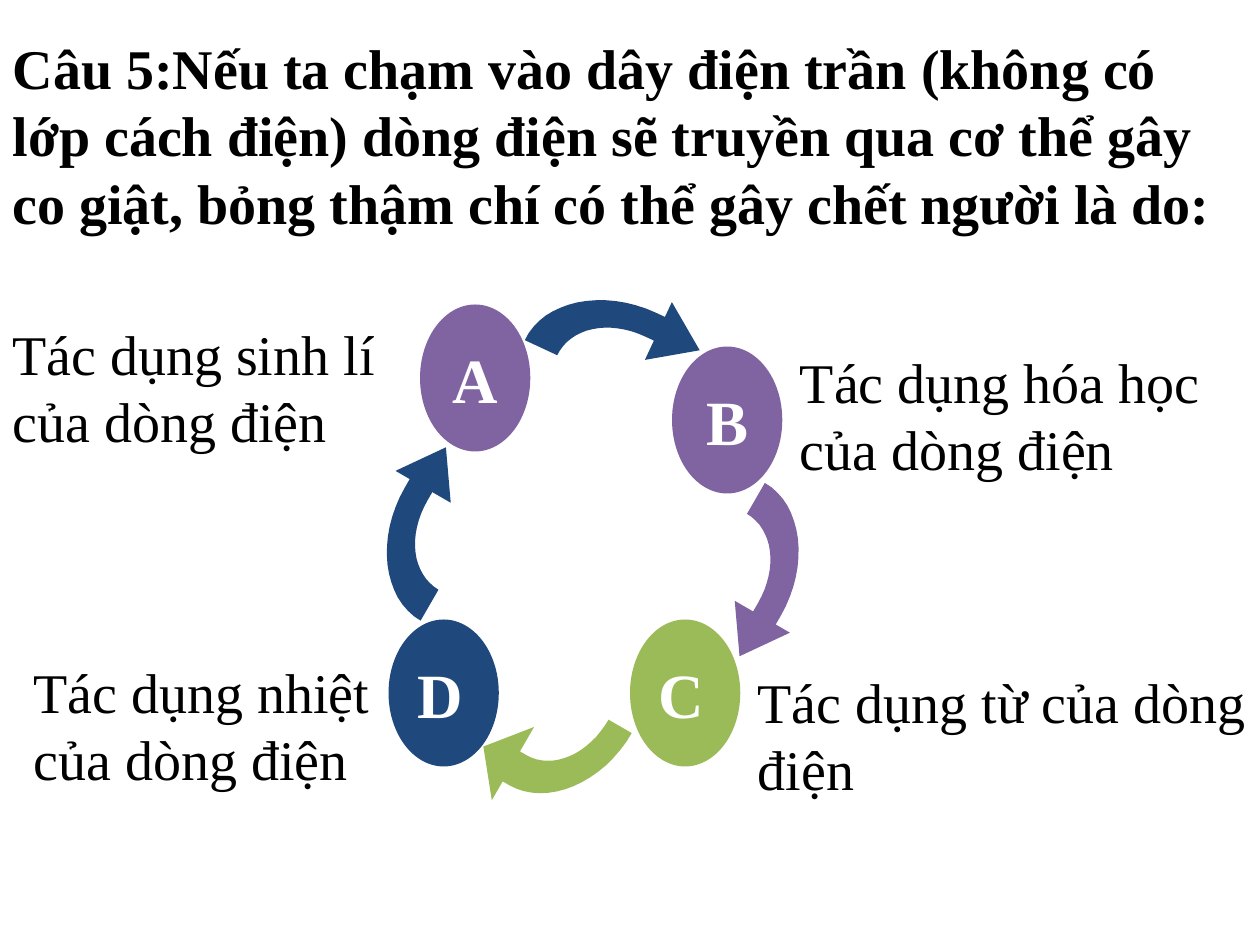
from dataclasses import dataclass

from pptx import Presentation
from pptx import util as u
from pptx.dml.color import RGBColor
from pptx.enum import shapes, text

CELL = u.Inches(1) / 12  # grid of 120 columns by 90 rows


@dataclass(frozen=True)
class Theme:
    font: str = "Times New Roman"
    black: str = "000000"
    white: str = "FFFFFF"
    plum: str = "8064A2"
    green: str = "9BBB59"
    navy: str = "1F497D"
    body: int = 32
    mark: int = 36


@dataclass(frozen=True)
class Box:
    col: float
    row: float
    cols: float
    rows: float

    def emu(self) -> list[int]:
        return [round(n * CELL) for n in (self.col, self.row, self.cols, self.rows)]


@dataclass(frozen=True)
class Choice:
    mark: str
    label: str
    area: Box
    col: float
    row: float
    fill: str
    align: text.PP_ALIGN


@dataclass(frozen=True)
class Arrow:
    area: Box
    turn: float
    fill: str


THEME = Theme()
LEFT, MID = text.PP_ALIGN.LEFT, text.PP_ALIGN.CENTER
TITLE = ("Câu 5:Nếu ta chạm vào dây điện trần (không có lớp cách điện) "
         "dòng điện sẽ truyền qua cơ thể gây co giật, bỏng thậm chí "
         "có thể gây chết người là do:")
CHOICES = [
    Choice("A", "Tác dụng sinh lí của dòng điện",
           Box(0, 31.8, 41, 10), 40, 29, THEME.plum, MID),
    Choice("B", "Tác dụng hóa học của dòng điện",
           Box(75, 34, 45, 11), 64, 33, THEME.plum, MID),
    Choice("C", "Tác dụng từ của dòng điện",
           Box(71, 64, 49, 12), 60, 59, THEME.green, LEFT),
    Choice("D", "Tác dụng nhiệt của dòng điện",
           Box(2, 62, 36, 14), 37, 59, THEME.navy, LEFT),
]
ARROWS = [
    Arrow(Box(51.2, 26.9, 15.5, 9.2), 25, THEME.navy),
    Arrow(Box(65.2, 50.4, 15.5, 9.2), 120, THEME.plum),
    Arrow(Box(46.3, 66.1, 11.6, 12.2), 210, THEME.green),
    Arrow(Box(32.2, 45.5, 15.5, 9.2), 300, THEME.navy),
]


def write(shape, words: str, size: int = THEME.body, color: str = THEME.black,
          bold: bool = False, align=LEFT, anchor=text.MSO_ANCHOR.MIDDLE) -> None:
    frame = shape.text_frame
    frame.word_wrap = True
    frame.auto_size = text.MSO_AUTO_SIZE.NONE
    frame.vertical_anchor = anchor
    frame.margin_left = frame.margin_right = u.Inches(0.1)
    frame.margin_top = frame.margin_bottom = u.Inches(0.1)
    para = frame.paragraphs[0]
    para.alignment = align
    run = para.add_run()
    run.text = words
    run.font.name, run.font.size, run.font.bold = THEME.font, u.Pt(size), bold
    run.font.color.rgb = RGBColor.from_string(color)


def paint(shape, color: str) -> None:
    shape.shadow.inherit = False
    shape.fill.solid()
    shape.fill.fore_color.rgb = RGBColor.from_string(color)
    shape.line.fill.background()


def curve(a, b, c, d, steps: int = 16) -> list[tuple[float, float]]:
    """Points along a cubic Bézier curve, both ends included."""
    points = []
    for i in range(steps + 1):
        t = i / steps
        s = 1 - t
        shares = (s**3, 3 * s * s * t, 3 * s * t * t, t**3)
        points.append(tuple(sum(k * p[n] for k, p in zip(shares, (a, b, c, d)))
                            for n in (0, 1)))
    return points


def bend() -> list[tuple[float, float]]:
    """Outline of a bent arrow, as shares of its box."""
    outer = curve((0.66, 0.17), (0.3, 0.17), (0, 0.55), (0, 1))
    inner = curve((0.22, 1), (0.22, 0.69), (0.41, 0.44), (0.66, 0.44))
    return [(0.72, 0), (0.72, 0.17), *outer, *inner,
            (0.72, 0.44), (0.72, 0.66), (1, 0.33)]


def draw_arrow(slide, arrow: Arrow) -> None:
    left, top, wide, high = arrow.area.emu()
    points = [(x * 1000, y * 1000) for x, y in bend()]
    pen = slide.shapes.build_freeform(*points[0], scale=(wide / 1000, high / 1000))
    pen.add_line_segments(points[1:], close=True)
    shape = pen.convert_to_shape(left, top)
    shape.rotation = arrow.turn
    paint(shape, arrow.fill)


def draw_choice(slide, item: Choice) -> None:
    write(slide.shapes.add_textbox(*item.area.emu()), item.label)
    disc = slide.shapes.add_shape(shapes.MSO_SHAPE.OVAL,
                                  *Box(item.col, item.row, 10.5, 14).emu())
    paint(disc, item.fill)
    write(disc, item.mark, size=THEME.mark, color=THEME.white, bold=True,
          align=item.align)


def main() -> None:
    deck = Presentation()
    deck.slide_width, deck.slide_height = u.Inches(10), u.Inches(7.5)
    slide = deck.slides.add_slide(deck.slide_layouts[5])
    title = slide.shapes.title
    title.left, title.top, title.width, title.height = Box(0, 2, 120, 10).emu()
    write(title, TITLE, bold=True, anchor=text.MSO_ANCHOR.TOP)
    for item in CHOICES:
        draw_choice(slide, item)
    for arrow in ARROWS:
        draw_arrow(slide, arrow)
    deck.save("out.pptx")


if __name__ == "__main__":
    main()
